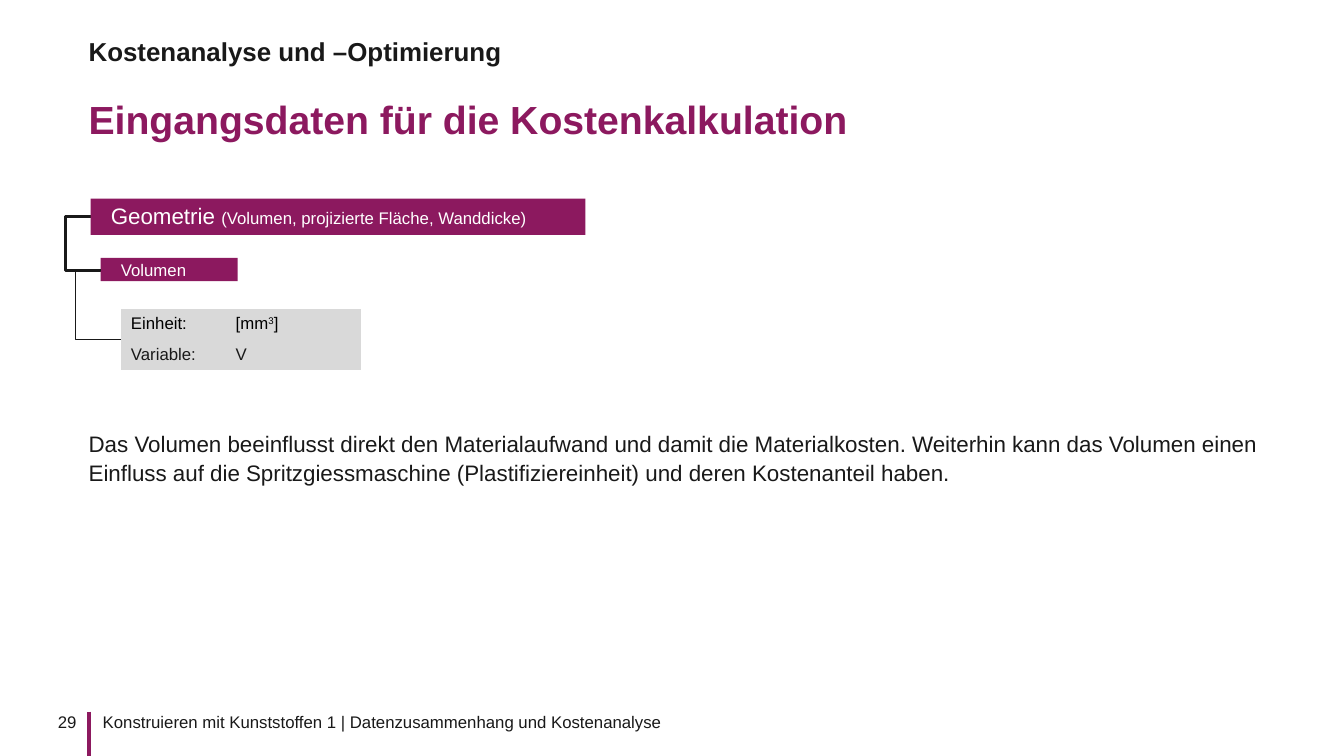
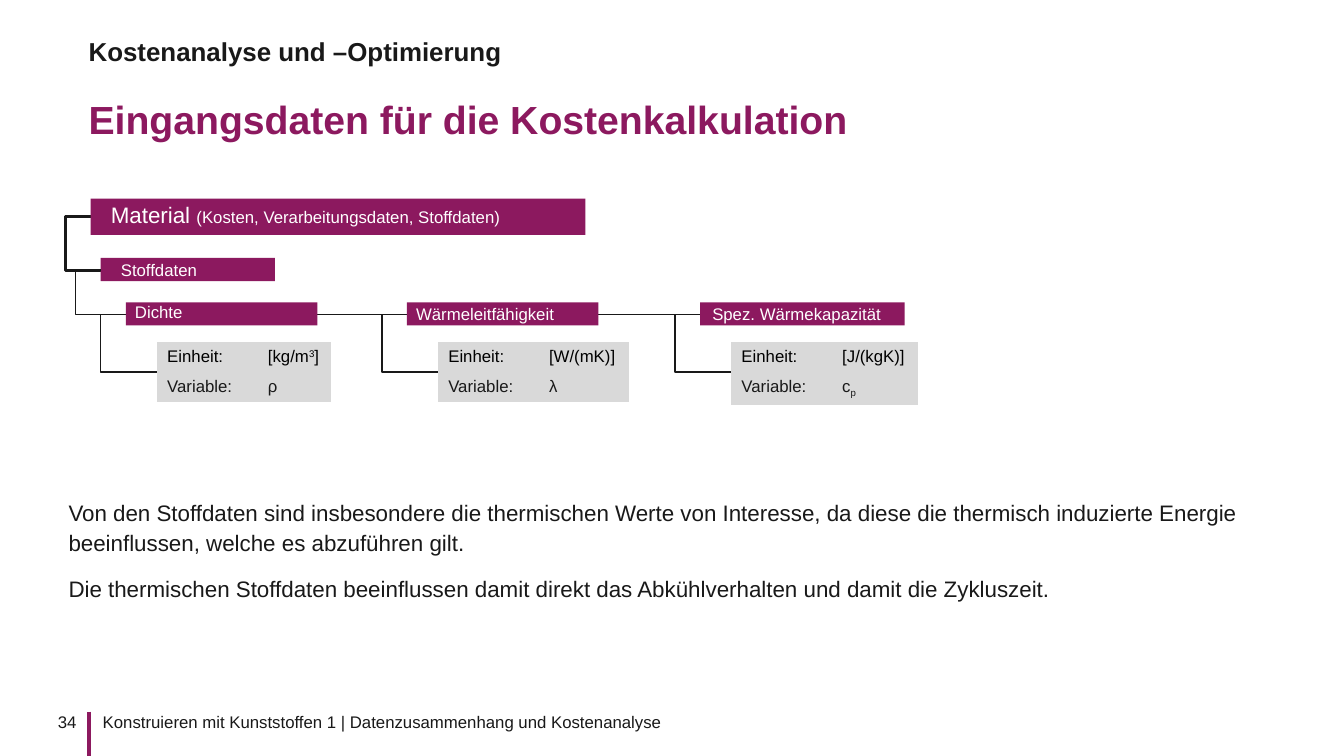
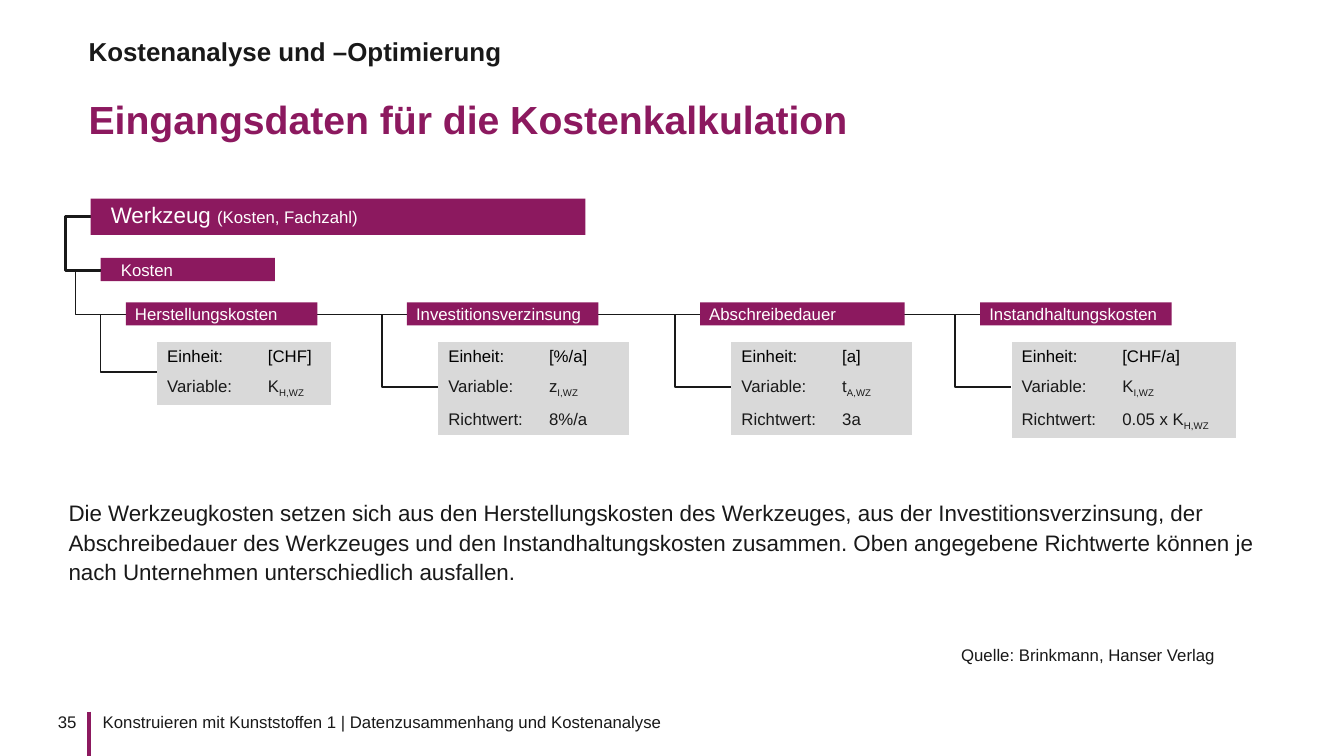
from lxml import etree
from pptx import Presentation
from pptx.dml.color import RGBColor
from pptx.enum.shapes import MSO_CONNECTOR, MSO_SHAPE
from pptx.enum.text import MSO_ANCHOR, PP_ALIGN
from pptx.oxml.ns import qn
from pptx.util import Emu, Pt

PX = 9144
WIDE, HIGH = 1334, 750
PLUM, INK, GREY, WHITE, BLACK = "8C195F", "191919", "D9D9D9", "FFFFFF", "000000"
FONT = "Arial"
TOP, MID = MSO_ANCHOR.TOP, MSO_ANCHOR.MIDDLE
RIGHT = PP_ALIGN.RIGHT
RECT = MSO_SHAPE.RECTANGLE
ELBOW, STRAIGHT = MSO_CONNECTOR.ELBOW, MSO_CONNECTOR.STRAIGHT
PLAIN = "{2D5ABB26-0587-4C30-8999-92F81FD0307C}"  # no style, no grid

LEFT, FULL = 88, 1209
STEP = 25       # how far a branch reaches left of its bar
DROP = 31       # how far a table sits right of its bar
ROW = 30
BRANCH = 312    # height of the line that joins the bars


def px(num):
    return Emu(int(num * PX))


def color(code):
    return RGBColor.from_string(code)


def put(item, **attrs):
    for name, value in attrs.items():
        setattr(item, name, value)


def sub(text):
    return text, {"base": -25}


def sup(text):
    return text, {"base": 30}


class Deck:
    def __init__(self):
        self.prs = Presentation()
        put(self.prs, slide_width=px(WIDE), slide_height=px(HIGH))

    def page(self, num):
        """Start a slide with the shared titles and footer."""
        self.shapes = self.prs.slides.add_slide(self.prs.slide_layouts[6]).shapes
        self.line(88, 706, 88, HIGH, PLUM, 3)
        self.text(90, 706, 587, 36, ["Konstruieren mit Kunststoffen 1 | "
                                     "Datenzusammenhang und Kostenanalyse"], inset=12)
        self.text(29, 706, 47, 20, [str(num)], alignment=RIGHT)
        self.text(LEFT, 76, FULL, 75, ["Eingangsdaten für die Kostenkalkulation"],
                  {"size": 28, "bold": True, "color": PLUM}, MID, line_spacing=1.2)
        self.text(LEFT, 37, FULL, 31, ["Kostenanalyse und –Optimierung"],
                  {"size": 18.5, "bold": True}, MID, line_spacing=0.9, space_after=Pt(6))

    def fill(self, frame, paras, style=None, **form):
        """Write paragraphs; each is a string or a list of strings and (text, style) runs."""
        for pos, runs in enumerate(paras):
            para = frame.add_paragraph() if pos else frame.paragraphs[0]
            put(para, **form)
            if pos:
                para.space_before = Pt(12)
            for part in [runs] if isinstance(runs, str) else runs:
                text, extra = (part, {}) if isinstance(part, str) else part
                look = {"size": 12, "bold": False, "color": INK, **(style or {}), **extra}
                run = para.add_run()
                run.text = text
                put(run.font, name=FONT, size=Pt(look["size"]), bold=look["bold"])
                run.font.color.rgb = color(look["color"])
                if "base" in look:
                    run._r.get_or_add_rPr().set("baseline", str(look["base"] * 1000))

    def text(self, x, y, w, h, paras, style=None, anchor=TOP, inset=0, **form):
        frame = self.shapes.add_textbox(px(x), px(y), px(w), px(h)).text_frame
        put(frame, word_wrap=True, vertical_anchor=anchor, margin_left=px(inset),
            margin_right=0, margin_top=0, margin_bottom=0)
        self.fill(frame, paras, style, **form)

    def body(self, x, y, *paras):
        self.text(x, y, FULL, 180, paras, {"size": 16}, line_spacing=1.1)

    def bar(self, x, y, w, h, runs, inset=20, lift=0):
        """Draw a plum bar; lift raises its text above the middle."""
        shape = self.shapes.add_shape(RECT, px(x), px(y), px(w), px(h))
        shape.shadow.inherit = False
        shape.fill.solid()
        shape.fill.fore_color.rgb = color(PLUM)
        shape.line.fill.background()
        put(shape.text_frame, word_wrap=False, vertical_anchor=MID, margin_left=px(inset),
            margin_right=0, margin_top=0, margin_bottom=px(2 * lift))
        self.fill(shape.text_frame, [runs], {"color": WHITE}, alignment=PP_ALIGN.LEFT)

    def line(self, x1, y1, x2, y2, tint=INK, width=1, kind=STRAIGHT):
        link = self.shapes.add_connector(kind, px(x1), px(y1), px(x2), px(y2))
        link.line.color.rgb = color(tint)
        link.line.width = Pt(width)
        etree.SubElement(link._element.spPr, qn("a:effectLst"))
        return link

    def elbow(self, x1, y1, x2, y2, width=1):
        """Link two left edges by a bend that lies STEP left of the first."""
        link = self.line(x1, y1, x2, y2, INK, width, ELBOW)
        geom = link._element.spPr.find(qn("a:prstGeom"))
        guides = geom.find(qn("a:avLst"))
        if guides is None:
            guides = etree.SubElement(geom, qn("a:avLst"))
        bend = round(-STEP / (x2 - x1) * 100000)
        etree.SubElement(guides, qn("a:gd"), name="adj1", fmla=f"val {bend}")

    def table(self, x, y, cols, rows):
        frame = self.shapes.add_table(len(rows), len(cols), px(x), px(y),
                                      px(sum(cols)), px(ROW * len(rows)))
        grid = frame.table
        put(grid, first_row=False, horz_banding=False)
        grid._tbl.tblPr.find(qn("a:tableStyleId")).text = PLAIN
        for col, width in zip(grid.columns, cols):
            col.width = px(width)
        for r, row in enumerate(rows):
            grid.rows[r].height = px(ROW)
            for c, runs in enumerate(row):
                cell = grid.cell(r, c)
                cell.fill.solid()
                cell.fill.fore_color.rgb = color(GREY)
                self.fill(cell.text_frame, [runs], {"color": INK if r else BLACK})

    def facts(self, x, y, cols, values, start):
        """Draw the table of named values and its branch from the point start."""
        names = ("Einheit:", "Variable:", "Richtwert:")
        self.table(x, y, cols, list(zip(names, values)))
        self.elbow(*start, x, y + ROW * len(values) // 2)

    def head(self, name, note, group, width, lift=2):
        """Draw the two upper levels of the tree."""
        self.elbow(90, 215, 100, 268, 2)
        self.bar(90, 197, 491, 36, [(name + " ", {"size": 16}), note], lift=lift)
        self.bar(100, 256, width, 23, group)

    def tree(self, nodes):
        """Draw a row of bars, each with its table below."""
        first, last = nodes[0], nodes[-1]
        self.elbow(100, 268, first["x"], BRANCH)
        self.line(first["x"] + first["w"], BRANCH, last["x"], BRANCH)
        for node in nodes:
            x = node["x"]
            self.facts(x + DROP, 339, (100, node["col"]), node["values"], (x, BRANCH))
            self.bar(x, 300, node["w"], 23, node["name"], node.get("inset", 9),
                     node.get("lift", 0))


def main():
    deck = Deck()

    deck.page(29)
    deck.head("Geometrie", "(Volumen, projizierte Fläche, Wanddicke)", "Volumen", 136, 1)
    deck.facts(120, 307, (104, 134), [["[mm", sup("3"), "]"], "V"], (100, 268))
    deck.body(LEFT, 424,
              "Das Volumen beeinflusst direkt den Materialaufwand und damit die "
              "Materialkosten. Weiterhin kann das Volumen einen Einfluss auf die "
              "Spritzgiessmaschine (Plastifiziereinheit) und deren Kostenanteil haben.")

    deck.page(34)
    deck.head("Material", "(Kosten, Verarbeitungsdaten, Stoffdaten)", "Stoffdaten", 173)
    deck.tree([
        {"name": "Dichte", "x": 125, "w": 190, "col": 73, "lift": 2,
         "values": [["[kg/m", sup("3"), "]"], "ρ"]},
        {"name": "Wärmeleitfähigkeit", "x": 404, "w": 190, "col": 89,
         "values": ["[W/(mK)]", "λ"]},
        {"name": "Spez. Wärmekapazität", "x": 695, "w": 203, "col": 85, "inset": 12,
         "values": ["[J/(kgK)]", ["c", sub("p")]]},
    ])
    deck.body(68, 493,
              "Von den Stoffdaten sind insbesondere die thermischen Werte von Interesse, "
              "da diese die thermisch induzierte Energie beeinflussen, welche es "
              "abzuführen gilt.",
              "Die thermischen Stoffdaten beeinflussen damit direkt das Abkühlverhalten "
              "und damit die Zykluszeit.")

    deck.page(35)
    deck.head("Werkzeug", "(Kosten, Fachzahl)", "Kosten", 173)
    deck.tree([
        {"name": "Herstellungskosten", "x": 125, "w": 190, "col": 73,
         "values": ["[CHF]", ["K", sub("H,WZ")]]},
        {"name": "Investitionsverzinsung", "x": 404, "w": 190, "col": 89,
         "values": ["[%/a]", ["z", sub("I,WZ")], "8%/a"]},
        {"name": "Abschreibedauer", "x": 695, "w": 203, "col": 79,
         "values": ["[a]", ["t", sub("A,WZ")], "3a"]},
        {"name": "Instandhaltungskosten", "x": 973, "w": 190, "col": 123,
         "values": ["[CHF/a]", ["K", sub("I,WZ")], ["0.05 x K", sub("H,WZ")]]},
    ])
    deck.body(68, 493,
              "Die Werkzeugkosten setzen sich aus den Herstellungskosten des Werkzeuges, "
              "aus der Investitionsverzinsung, der Abschreibedauer des Werkzeuges und den "
              "Instandhaltungskosten zusammen. Oben angegebene Richtwerte können je nach "
              "Unternehmen unterschiedlich ausfallen.")
    deck.text(942, 640, 290, 28, ["Quelle: Brinkmann, Hanser Verlag"], inset=12)

    deck.prs.save("out.pptx")


if __name__ == "__main__":
    main()
